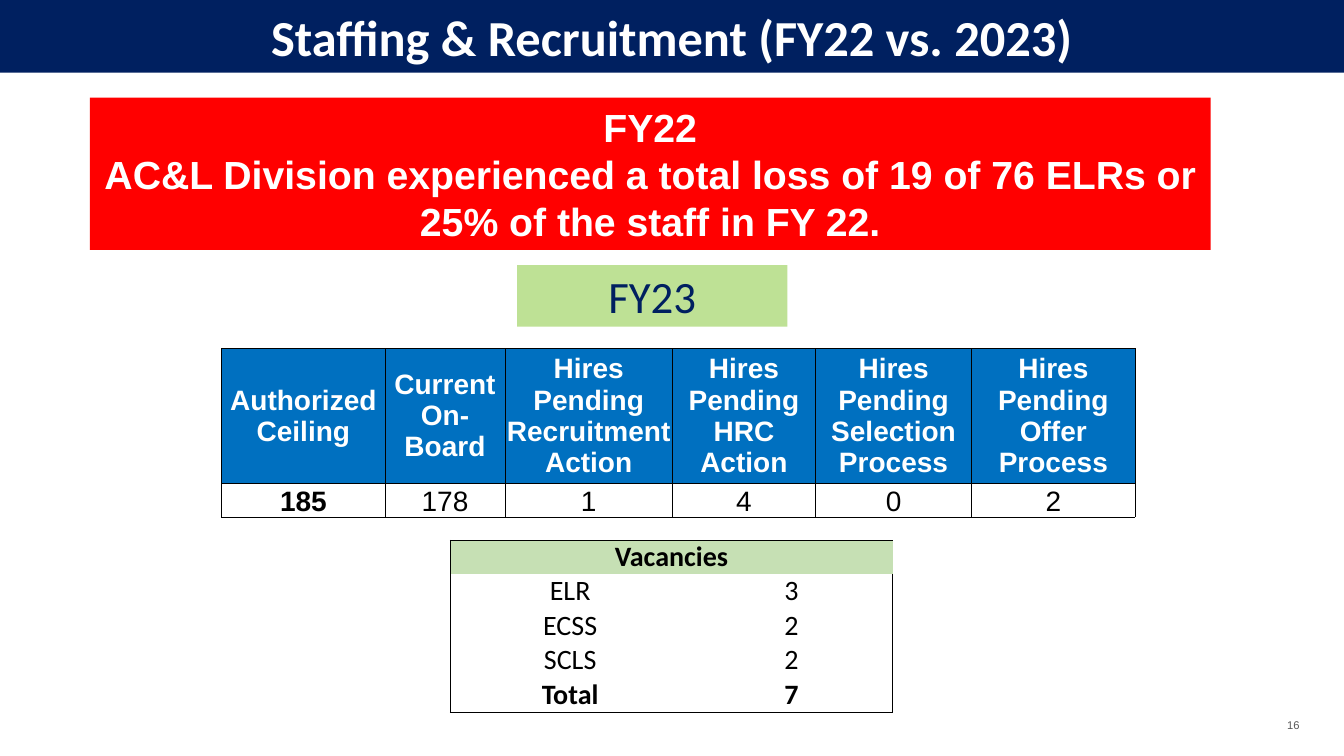
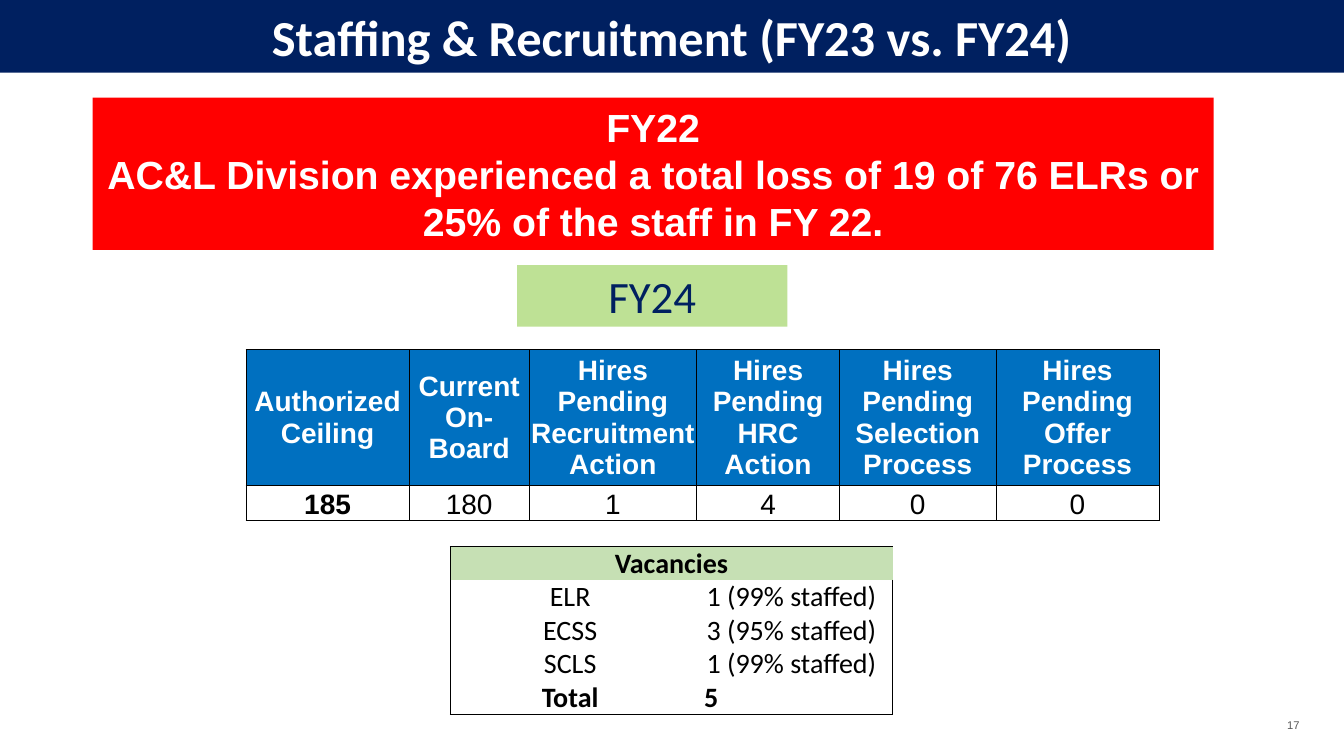
from lxml.etree import SubElement
from pptx import Presentation
from pptx.dml.color import RGBColor
from pptx.enum.shapes import MSO_SHAPE as Shape
from pptx.enum.text import MSO_ANCHOR as Anchor, PP_ALIGN as Align
from pptx.oxml.ns import qn
from pptx.util import Inches, Pt

NAVY, RED, BLUE = "002060", "FF0000", "0070C0"
LIME, SAGE = "BEE195", "C6E0B4"
WHITE, BLACK, GREY = "FFFFFF", "000000", "595959"

LOSS = ["FY22", "AC&L Division experienced a total loss of 19 of 76 ELRs "
        "or 25% of the staff in FY 22."]
HIRING_HEADS = ["Authorized Ceiling", "Current On-Board",
                "Hires Pending Recruitment Action", "Hires Pending HRC Action",
                "Hires Pending Selection Process", "Hires Pending Offer Process"]
HIRING_COLS = [12.15, 8.93, 12.45, 10.65, 11.63, 12.15]
VACANCY_COLS = [17.85, 15.08]
VACANCY_HEADS = ["ELR", "ECSS", "SCLS", "Total"]

SLIDES = [
    dict(number="16", title="Staffing & Recruitment (FY22 vs. 2023)", year="FY23",
         loss_x=6.68, hiring_at=(16.5, 46.13), hiring_rows=[16.75, 4.27],
         hiring=["185", "178", "1", "4", "0", "2"],
         vacancy_y=71.47, vacancy_rows=[4.45] + [4.57] * 4,
         vacancies=["3", "2", "2", "7"], total_indent=None),
    dict(number="17", title="Staffing & Recruitment (FY23 vs. FY24)", year="FY24",
         loss_x=6.9, hiring_at=(18.3, 46.27), hiring_rows=[17.95, 4.65],
         hiring=["185", "180", "1", "4", "0", "0"],
         vacancy_y=72.27, vacancy_rows=[4.45] * 5,
         vacancies=["1 (99% staffed)", "3 (95% staffed)", "1 (99% staffed)", "5"],
         total_indent=0.13),
]


def rgb(color):
    return RGBColor.from_string(color)


class Deck:
    def __init__(self):
        self.prs = Presentation()
        self.prs.slide_width = Inches(13.33)
        self.prs.slide_height = Inches(7.5)
        self.s = None

    def x(self, share):
        return int(self.prs.slide_width * share / 100)

    def y(self, share):
        return int(self.prs.slide_height * share / 100)

    def box(self, left, top, width, height):
        return self.x(left), self.y(top), self.x(width), self.y(height)

    def text(self, tf, lines, size, color, font="Calibri", bold=False,
             align=Align.CENTER, anchor=Anchor.MIDDLE, inset=0):
        tf.word_wrap = True
        tf.vertical_anchor = anchor
        tf.margin_left = tf.margin_right = Inches(inset)
        tf.margin_top = tf.margin_bottom = Inches(inset / 2)
        for i, line in enumerate(lines):
            p = tf.paragraphs[0] if i == 0 else tf.add_paragraph()
            p.alignment = align
            r = p.add_run()
            r.text = line
            r.font.name, r.font.size, r.font.bold = font, Pt(size), bold
            r.font.color.rgb = rgb(color)

    def slide(self, title, number):
        self.s = self.prs.slides.add_slide(self.prs.slide_layouts[5])
        sp = self.s.shapes.title
        sp.left, sp.top, sp.width, sp.height = self.box(0, -1.07, 100, 10.67)
        sp.fill.solid()
        sp.fill.fore_color.rgb = rgb(NAVY)
        self.text(sp.text_frame, [title], 36, WHITE, bold=True)
        sp.text_frame.paragraphs[0].line_spacing = 1.14
        sp = self.s.shapes.add_textbox(*self.box(93.55, 94.4, 3.15, 3.07))
        self.text(sp.text_frame, [number], 8, GREY, "Arial", align=Align.RIGHT)

    def band(self, at, lines, fill, *style, **options):
        sp = self.s.shapes.add_shape(Shape.RECTANGLE, *self.box(*at))
        sp.shadow.inherit = False
        sp.fill.solid()
        sp.fill.fore_color.rgb = rgb(fill)
        sp.line.fill.background()
        self.text(sp.text_frame, lines, *style, **options)

    def table(self, left, top, cols, rows):
        at = self.box(left, top, sum(cols), sum(rows))
        tbl = self.s.shapes.add_table(len(rows), len(cols), *at).table
        tbl.first_row = tbl.horz_banding = False
        for col, share in zip(tbl.columns, cols):
            col.width = self.x(share)
        for row, share in zip(tbl.rows, rows):
            row.height = self.y(share)
        return tbl

    def cell(self, cell, text, fill, sides, *style, **options):
        if text:
            self.text(cell.text_frame, [text], *style, **options)
        cell.margin_left = cell.margin_right = Inches(0.01)
        cell.margin_top = cell.margin_bottom = 0
        cell.vertical_anchor = options.get("anchor", Anchor.MIDDLE)
        tc_pr = cell._tc.get_or_add_tcPr()
        for side in "LRTB":
            ln = SubElement(tc_pr, qn("a:ln" + side), w=str(Pt(0.5)))
            if side in sides:
                solid = SubElement(ln, qn("a:solidFill"))
                SubElement(solid, qn("a:srgbClr"), val=BLACK)
            else:
                SubElement(ln, qn("a:noFill"))
        if fill:
            cell.fill.solid()
            cell.fill.fore_color.rgb = rgb(fill)
        else:
            cell.fill.background()

    def hiring(self, at, rows, values):
        tbl = self.table(*at, HIRING_COLS, rows)
        for c, (head, value) in enumerate(zip(HIRING_HEADS, values)):
            self.cell(tbl.cell(0, c), head, BLUE, "LRTB", 20, WHITE, "Arial", True)
            self.cell(tbl.cell(1, c), value, None, "LRTB", 20, BLACK, "Arial",
                      c == 0, anchor=Anchor.BOTTOM)

    def vacancies(self, top, rows, values, total_indent):
        tbl = self.table(33.5, top, VACANCY_COLS, rows)
        lines = [("Vacancies", "")] + list(zip(VACANCY_HEADS, values))
        last = len(lines) - 1
        for i, line in enumerate(lines):
            edge = {0: "T", last: "B"}.get(i, "")
            for c, text in enumerate(line):
                self.cell(tbl.cell(i, c), text, None if i else SAGE, "LR"[c] + edge,
                          20, BLACK, bold=i in (0, last), anchor=Anchor.BOTTOM)
        tbl.cell(0, 0).merge(tbl.cell(0, 1))
        if total_indent:
            p = tbl.cell(last, 1).text_frame.paragraphs[0]
            p.alignment = Align.LEFT
            p._p.get_or_add_pPr().set("marL", str(Inches(total_indent)))


def main():
    deck = Deck()
    for d in SLIDES:
        deck.slide(d["title"], d["number"])
        deck.band((d["loss_x"], 12.93, 83.4, 20.13), LOSS, RED,
                  28, WHITE, "Arial", True, inset=0.1)
        deck.band((38.48, 35.07, 20.1, 8.13), [d["year"]], LIME, 32, NAVY)
        deck.hiring(d["hiring_at"], d["hiring_rows"], d["hiring"])
        deck.vacancies(d["vacancy_y"], d["vacancy_rows"], d["vacancies"],
                       d["total_indent"])
    deck.prs.save("out.pptx")


if __name__ == "__main__":
    main()
